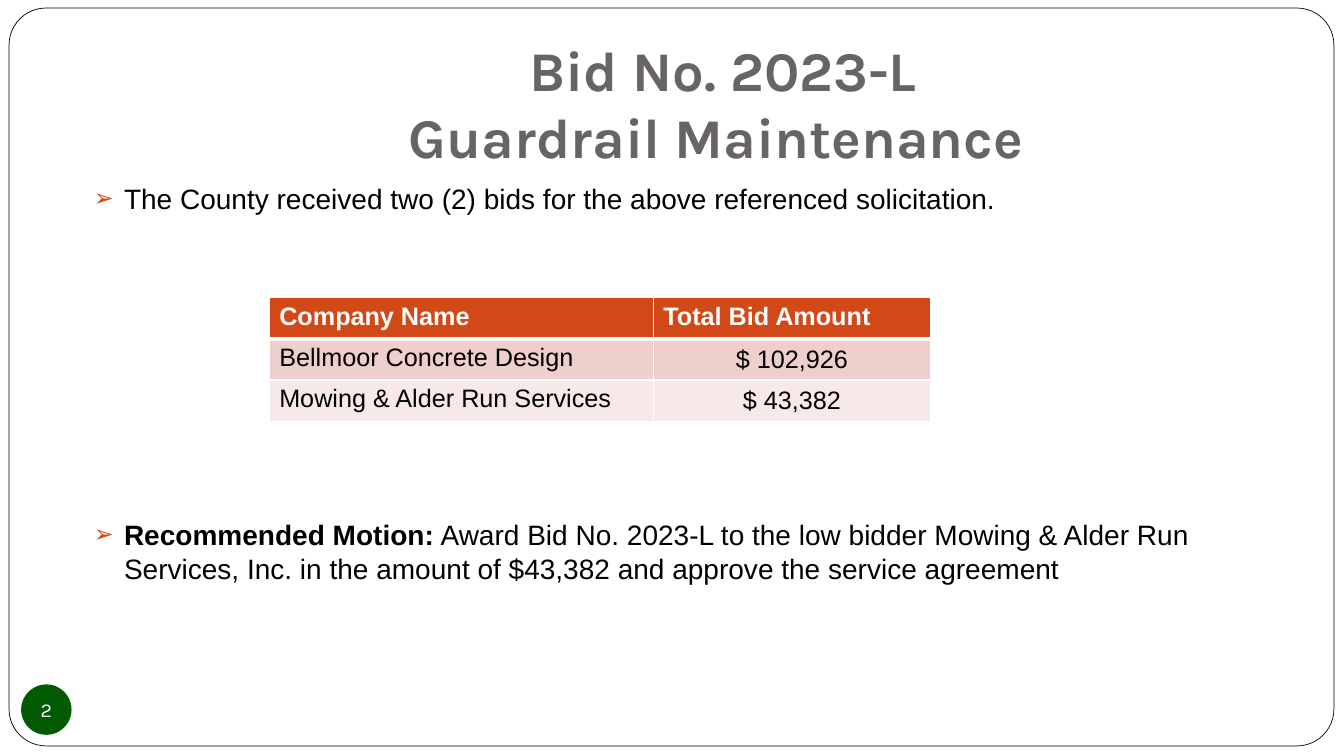
import pptx
import pptx.util
import pptx.dml.color
import pptx.enum.shapes
import pptx.enum.text
import pptx.oxml
import pptx.oxml.ns
import lxml.etree

Inches, Pt = pptx.util.Inches, pptx.util.Pt
ALIGN = pptx.enum.text.PP_ALIGN
ANCHOR = pptx.enum.text.MSO_ANCHOR
SHAPE = pptx.enum.shapes.MSO_SHAPE

HEADING = "Bid No. 2023-L\vGuardrail Maintenance "
POINTS = [
    [("The County received two (2) bids for the above referenced solicitation.", False)],
    [("Recommended Motion:", True),
     (" Award Bid No. 2023-L to the low bidder Mowing & Alder Run Services, Inc. "
      "in the amount of $43,382 and approve the service agreement", False)],
]
POINT_GAPS = [0, 210]
BIDS = [
    ("Company Name", "Total Bid Amount"),
    ("Bellmoor Concrete Design", "$ 102,926"),
    ("Mowing & Alder Run Services", "$ 43,382"),
]
BID_FILLS = ["D34817", "EFCFCC", "F7E9E8"]
BID_COLUMNS = [3.81, 2.75]
BID_ROW = 0.41
PAGE = "2"


def color(value):
    return pptx.dml.color.RGBColor.from_string(value)


def style(font, name, size, value, bold=False):
    font.name, font.size, font.bold = name, Pt(size), bold
    font.color.rgb = color(value)


def place(part, left, top, width, height):
    part.left, part.top = Inches(left), Inches(top)
    part.width, part.height = Inches(width), Inches(height)


def add_plain(kind, box, fill):
    part = slide.shapes.add_shape(kind, *map(Inches, box))
    part.shadow.inherit = False
    part.fill.solid()
    part.fill.fore_color.rgb = color(fill)
    return part


def add_bullet(paragraph):
    properties = paragraph._p.get_or_add_pPr()
    properties.set("marL", str(Inches(0.3)))
    properties.set("indent", str(-Inches(0.3)))
    namespace = pptx.oxml.ns.nsdecls("a")
    for mark in (
        f'<a:buClr {namespace}><a:srgbClr val="D34817"/></a:buClr>',
        f'<a:buSzPct {namespace} val="85000"/>',
        f'<a:buFont {namespace} typeface="Wingdings 3"/>',
        f'<a:buChar {namespace} char="➢"/>',
    ):
        if "buFont" not in mark:
            properties.append(pptx.oxml.parse_xml(mark))


def add_borders(cell, bottom):
    properties = cell._tc.get_or_add_tcPr()
    widths = {"lnL": 1, "lnR": 1, "lnT": 1, "lnB": bottom}
    for position, (side, width) in enumerate(widths.items()):
        border = pptx.oxml.parse_xml(
            f'<a:{side} {pptx.oxml.ns.nsdecls("a")} w="{Pt(width)}">'
            f'<a:solidFill><a:srgbClr val="FFFFFF"/></a:solidFill></a:{side}>')
        properties.insert(position, border)


deck = pptx.Presentation()
deck.slide_width, deck.slide_height = Inches(13.33), Inches(7.5)
slide = deck.slides.add_slide(deck.slide_layouts[1])

frame = add_plain(SHAPE.ROUNDED_RECTANGLE, (0.09, 0.08, 13.14, 7.32), "FFFFFF")
frame.adjustments[0] = 0.05
frame.line.color.rgb = color("000000")
frame.line.width = Pt(0.5)
slide.shapes._spTree.insert(2, frame._element)

title = slide.shapes.title
place(title, 2.67, 0.3, 9, 1.25)
title.text_frame.text = HEADING
title.text_frame.auto_size = pptx.enum.text.MSO_AUTO_SIZE.NONE
title.text_frame.vertical_anchor = ANCHOR.TOP
title.text_frame.margin_bottom = Inches(0.1)
title.text_frame.paragraphs[0].alignment = ALIGN.CENTER
for run in title.text_frame.paragraphs[0].runs:
    style(run.font, "Karla", 40, "696464", True)

body = slide.placeholders[1]
place(body, 0.83, 1.75, 11.67, 4.83)
body.text_frame.auto_size = pptx.enum.text.MSO_AUTO_SIZE.NONE
body.text_frame.text = "\n".join("" for point in POINTS)
for paragraph, point, gap in zip(body.text_frame.paragraphs, POINTS, POINT_GAPS):
    add_bullet(paragraph)
    paragraph.space_before, paragraph.space_after = Pt(gap), Pt(6)
    for words, bold in point:
        run = paragraph.add_run()
        run.text = words
        style(run.font, "Arial", 20, "000000", bold)

badge = add_plain(SHAPE.OVAL, (0.21, 6.79, 0.5, 0.5), "025A02")
badge.line.fill.background()
label = badge.text_frame
label.text = PAGE
label.word_wrap = False
label.vertical_anchor = ANCHOR.MIDDLE
label.margin_left = label.margin_right = label.margin_top = label.margin_bottom = 0
label.paragraphs[0].alignment = ALIGN.CENTER
style(label.paragraphs[0].runs[0].font, "Karla", 14, "FFFFFF")

bids = slide.shapes.add_table(
    len(BIDS), len(BID_COLUMNS), Inches(2.67), Inches(2.95),
    Inches(sum(BID_COLUMNS)), Inches(BID_ROW * len(BIDS))).table
for column, width in zip(bids.columns, BID_COLUMNS):
    column.width = Inches(width)
for row, (entries, fill) in enumerate(zip(BIDS, BID_FILLS)):
    bids.rows[row].height = Inches(BID_ROW)
    header = row == 0
    for column, words in enumerate(entries):
        cell = bids.cell(row, column)
        cell.text_frame.text = words
        cell.fill.solid()
        cell.fill.fore_color.rgb = color(fill)
        add_borders(cell, 3 if header else 1)
        paragraph = cell.text_frame.paragraphs[0]
        style(paragraph.runs[0].font, "Arial", 18, "FFFFFF" if header else "000000", header)
        if column == 1 and not header:
            cell.vertical_anchor = ANCHOR.MIDDLE
            paragraph.alignment = ALIGN.CENTER

deck.save("out.pptx")
